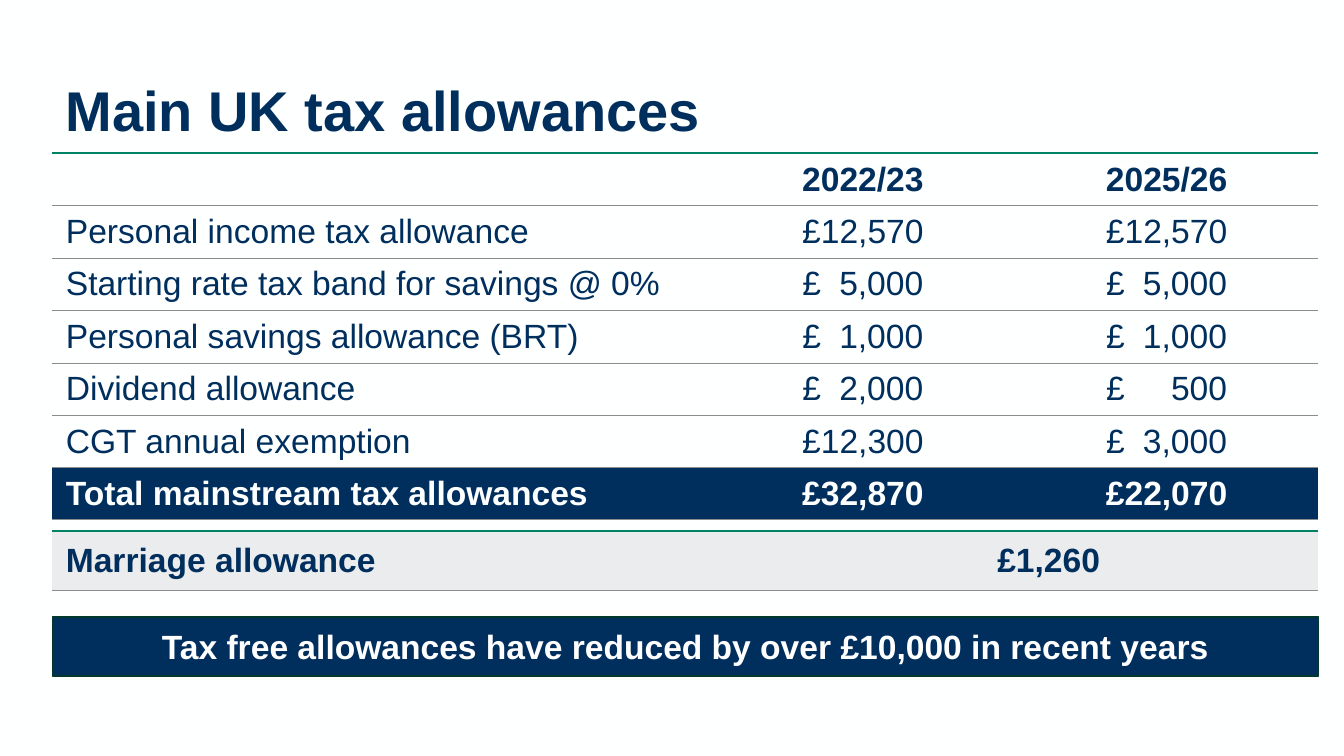
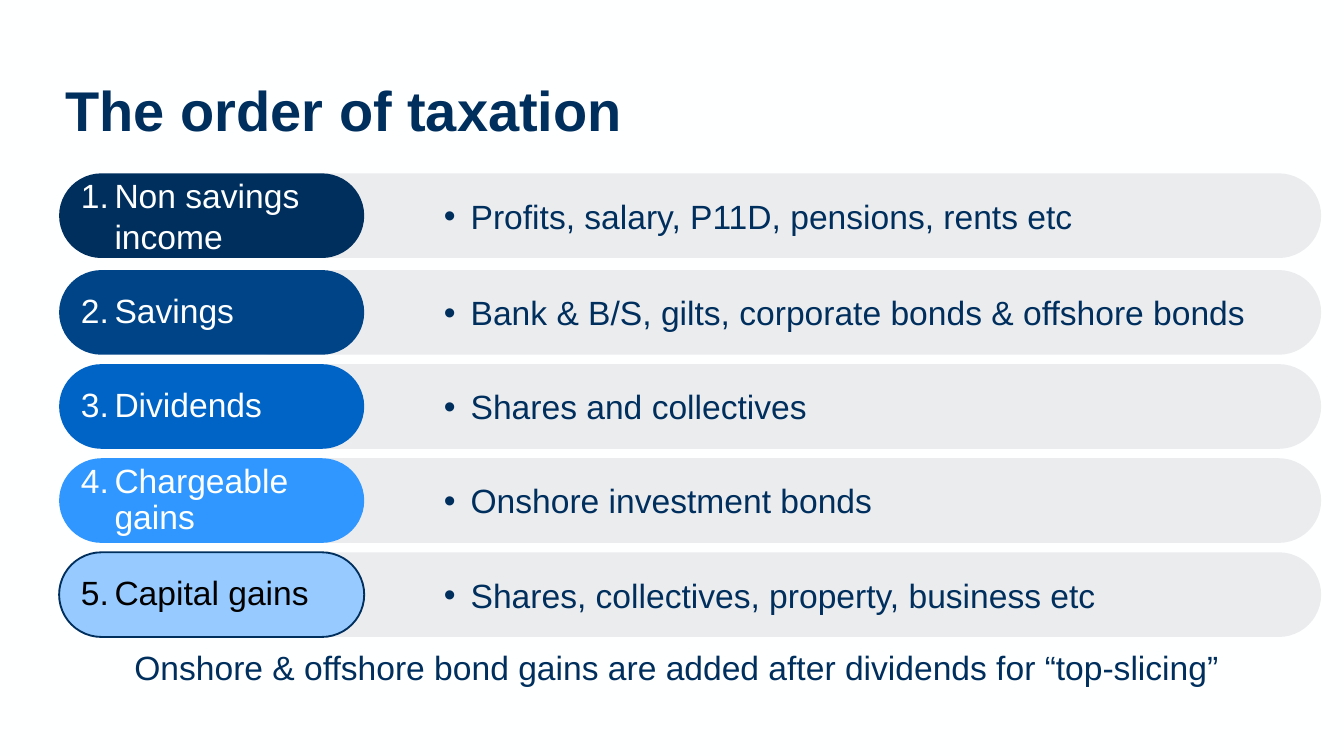
from lxml import etree
from pptx import Presentation
from pptx.dml.color import RGBColor
from pptx.enum.shapes import MSO_SHAPE
from pptx.enum.text import MSO_ANCHOR, PP_ALIGN
from pptx.oxml.ns import qn
from pptx.util import Inches, Pt

LEFT, CENTER = PP_ALIGN.LEFT, PP_ALIGN.CENTER
TOP, MIDDLE = MSO_ANCHOR.TOP, MSO_ANCHOR.MIDDLE
RECT, PILL = MSO_SHAPE.RECTANGLE, MSO_SHAPE.ROUNDED_RECTANGLE

FONT = "Arial"
NAVY, WHITE, PAPER, BLACK = "002F5E", "FFFFFF", "FEFFFF", "000000"
GREY, RULE, GREEN, EDGE = "EBECEE", "898D8D", "008264", "00392C"

SLIDE_W = 10
SLIDE_H = SLIDE_W * 9 / 16
MARGIN, CONTENT_W, BAND_H = 0.39, 9.42, 0.44
TEXT_INSETS = (0.1, 0.05, 0.1, 0.05)
CELL_INSET, CELL_PAD = 0.1, 0.04

ALLOWANCES_TITLE = "Main UK tax allowances"
ALLOWANCES = [
    ("", "2022/23", "2025/26"),
    ("Personal income tax allowance", "£12,570", "£12,570"),
    ("Starting rate tax band for savings @ 0%", "£\t5,000", "£\t5,000"),
    ("Personal savings allowance (BRT)", "£\t1,000", "£\t1,000"),
    ("Dividend allowance", "£\t2,000", "£\t500"),
    ("CGT annual exemption", "£12,300", "£\t3,000"),
    ("Total mainstream tax allowances", "£32,870", "£22,070"),
]
ALLOWANCE_COLS, ALLOWANCE_TOP, ALLOWANCE_ROW_H = (4.9, 2.26, 2.26), 1.14, 0.39
AMOUNT_INSET, AMOUNT_TAB = 0.68, 0.9
MARRIAGE = ("Marriage allowance", "£1,260")
MARRIAGE_COLS, MARRIAGE_TOP, MARRIAGE_INSET = (6.45, 2.97), 3.95, 0.58
BANNER = "Tax free allowances have reduced by over £10,000 in recent years"
BANNER_TOP = 4.59

ORDER_TITLE = "The order of taxation"
ORDER = [
    (1.29, "Non savings income", "Profits, salary, P11D, pensions, rents etc",
     NAVY, PAPER, None, 1.0),
    (2.01, "Savings", "Bank & B/S, gilts, corporate bonds & offshore bonds",
     "004488", PAPER, None, 0.9),
    (2.71, "Dividends", "Shares and collectives",
     "0063C6", PAPER, None, 0.9),
    (3.41, "Chargeable gains", "Onshore investment bonds",
     "2F97FF", PAPER, None, 0.9),
    (4.11, "Capital gains", "Shares, collectives, property, business etc",
     "97CBFF", BLACK, NAVY, 0.9),
]
ORDER_H = 0.63
LABEL_X, LABEL_W, DETAIL_X, DETAIL_W = 0.44, 2.27, 1.71, 8.12
ORDER_NOTE = "Onshore & offshore bond gains are added after dividends for “top-slicing”"


def rgb(value):
    return RGBColor.from_string(value)


def add_child(parent, tag, **attrs):
    return etree.SubElement(parent, qn(tag), {k: str(v) for k, v in attrs.items()})


def set_insets(holder, insets):
    (holder.margin_left, holder.margin_top,
     holder.margin_right, holder.margin_bottom) = map(Inches, insets)


def style(tf, color, size=18, bold=False, align=LEFT):
    p = tf.paragraphs[0]
    p.alignment = align
    for r in p.runs:
        r.font.name, r.font.size, r.font.bold = FONT, Pt(size), bold
        r.font.color.rgb = rgb(color)
    return p


def add_bullet(p, indent, tag, **attrs):
    pPr = p._p.get_or_add_pPr()
    pPr.set("marL", str(Inches(indent)))
    pPr.set("indent", str(Inches(-indent)))
    add_child(pPr, "a:buFont", typeface=FONT)
    add_child(pPr, tag, **attrs)


def set_frame(tf, text, anchor, insets=TEXT_INSETS):
    tf.word_wrap, tf.vertical_anchor = True, anchor
    set_insets(tf, insets)
    tf.text = text


def add_text(s, box, text, anchor=MIDDLE, **look):
    tf = s.shapes.add_textbox(*map(Inches, box)).text_frame
    set_frame(tf, text, anchor)
    return style(tf, NAVY, **look)


def add_block(s, kind, box, text, fill, color, line=None, insets=TEXT_INSETS, **look):
    sp = s.shapes.add_shape(kind, *map(Inches, box))
    sp.shadow.inherit = False
    sp.fill.solid()
    sp.fill.fore_color.rgb = rgb(fill)
    if kind == PILL:
        sp.adjustments[0] = 0.5
    if line:
        sp.line.color.rgb = rgb(line)
        sp.line.width = Pt(1)
    else:
        sp.line.fill.background()
    set_frame(sp.text_frame, text, MIDDLE, insets)
    return style(sp.text_frame, color, **look)


def add_slide(prs, title):
    s = prs.slides.add_slide(prs.slide_layouts[6])
    s.background.fill.solid()
    s.background.fill.fore_color.rgb = rgb(PAPER)
    p = add_text(s, (MARGIN, 0.3, 9.31, 1.09), title, size=30, bold=True)
    p.line_spacing = Pt(31)
    return s


def add_grid(s, top, widths, row_h, n_rows):
    frame = s.shapes.add_table(n_rows, len(widths), Inches(MARGIN), Inches(top),
                               Inches(sum(widths)), Inches(row_h * n_rows))
    table = frame.table
    table.first_row = table.horz_banding = False
    for col, width in zip(table.columns, widths):
        col.width = Inches(width)
    for row in table.rows:
        row.height = Inches(row_h)
    return table


def set_cell(cell, text, color, fill, top, bottom, inset=CELL_INSET, **look):
    tcPr = cell._tc.get_or_add_tcPr()
    for tag in ("a:lnL", "a:lnR"):
        add_child(add_child(tcPr, tag, w=0), "a:noFill")
    for tag, (line, width) in (("a:lnT", top), ("a:lnB", bottom)):
        ln = add_child(tcPr, tag, w=Pt(width))
        add_child(add_child(ln, "a:solidFill"), "a:srgbClr", val=line)
    if fill:
        cell.fill.solid()
        cell.fill.fore_color.rgb = rgb(fill)
    else:
        cell.fill.background()
    cell.vertical_anchor = MIDDLE
    set_insets(cell, (inset, CELL_PAD, CELL_INSET, CELL_PAD))
    cell.text_frame.text = text
    return style(cell.text_frame, color, **look)


def build_allowances(prs):
    s = add_slide(prs, ALLOWANCES_TITLE)
    last = len(ALLOWANCES) - 1
    table = add_grid(s, ALLOWANCE_TOP, ALLOWANCE_COLS, ALLOWANCE_ROW_H, last + 1)
    for i, row in enumerate(ALLOWANCES):
        total = i == last
        color, fill = (PAPER, NAVY) if total else (NAVY, None)
        top = (GREEN, 1) if i == 0 else (RULE, 0.25)
        bottom = (RULE, 0.5 if total else 0.25)
        for j, text in enumerate(row):
            tabbed = "\t" in text
            p = set_cell(table.cell(i, j), text, color, fill, top, bottom,
                         inset=AMOUNT_INSET if tabbed else CELL_INSET,
                         bold=i in (0, last),
                         align=CENTER if j and not tabbed else LEFT)
            if tabbed:
                tabs = add_child(p._p.get_or_add_pPr(), "a:tabLst")
                add_child(tabs, "a:tab", pos=Inches(AMOUNT_TAB), algn="r")

    table = add_grid(s, MARRIAGE_TOP, MARRIAGE_COLS, BAND_H, 1)
    for j, (text, inset) in enumerate(zip(MARRIAGE, (CELL_INSET, MARRIAGE_INSET))):
        set_cell(table.cell(0, j), text, NAVY, GREY, (GREEN, 1), (RULE, 0.5),
                 inset=inset, bold=True)
    add_block(s, RECT, (MARGIN, BANNER_TOP, CONTENT_W, BAND_H), BANNER,
              NAVY, WHITE, line=EDGE, bold=True, align=CENTER)


def build_order(prs):
    s = add_slide(prs, ORDER_TITLE)
    for number, (y, label, detail, fill, color, line, spacing) in enumerate(ORDER, 1):
        p = add_block(s, PILL, (DETAIL_X, y, DETAIL_W, ORDER_H), detail, GREY, NAVY,
                      insets=(1.5, 0.04, 0.07, 0.04))
        p.level = 1
        p.space_after = Pt(2)
        add_bullet(p, 0.2, "a:buChar", char="•")
        p = add_block(s, PILL, (LABEL_X, y, LABEL_W, ORDER_H), label, fill, color,
                      line=line, insets=(0.07, 0.04, 0.07, 0.04))
        p.line_spacing = spacing
        add_bullet(p, 0.25, "a:buAutoNum", type="arabicPeriod", startAt=number)
    p = add_text(s, (0.33, 4.8, 9.41, 0.3), ORDER_NOTE, anchor=TOP, align=CENTER)
    p.line_spacing = 0.9


def main():
    prs = Presentation()
    prs.slide_width, prs.slide_height = Inches(SLIDE_W), Inches(SLIDE_H)
    build_allowances(prs)
    build_order(prs)
    prs.save("out.pptx")


if __name__ == "__main__":
    main()
